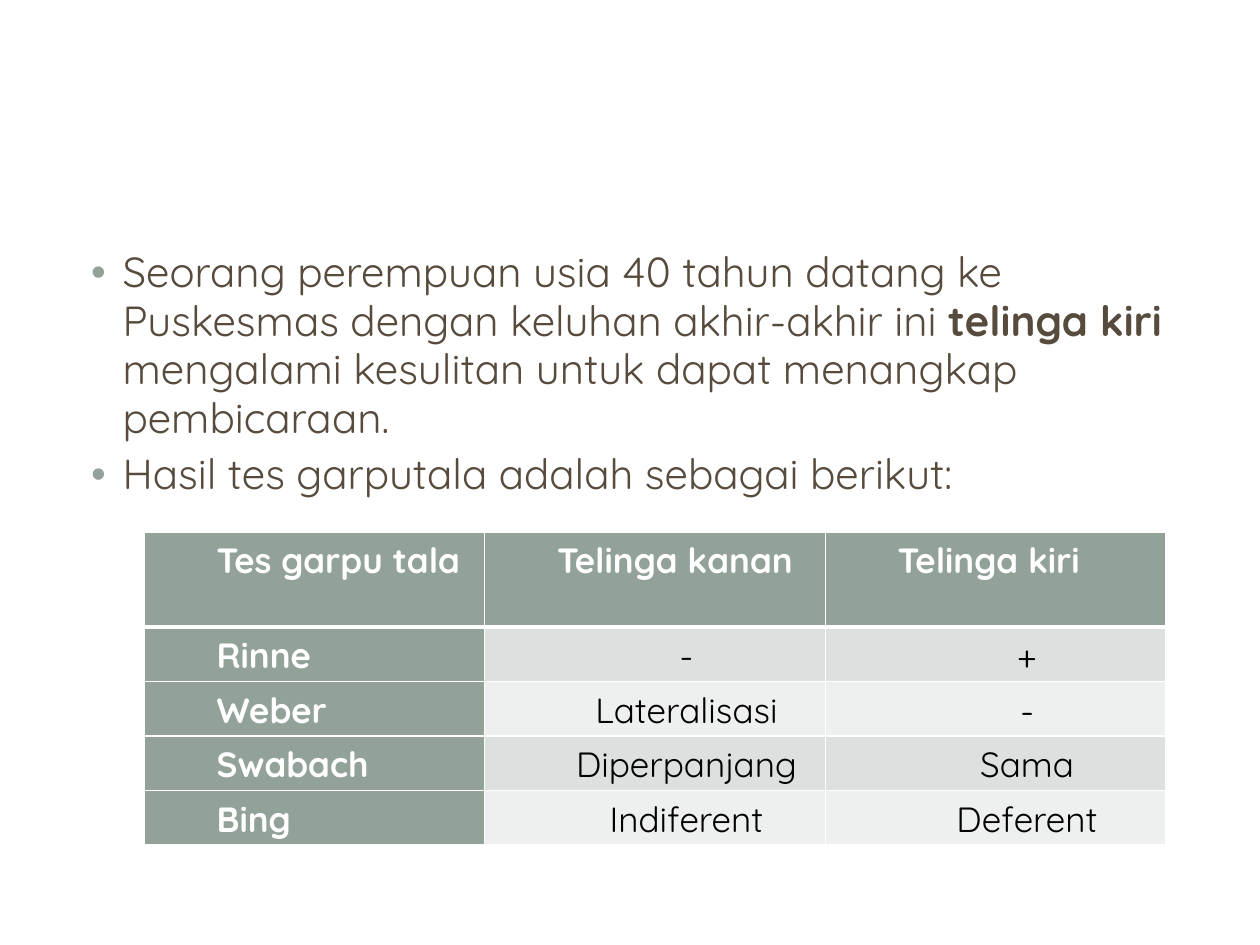
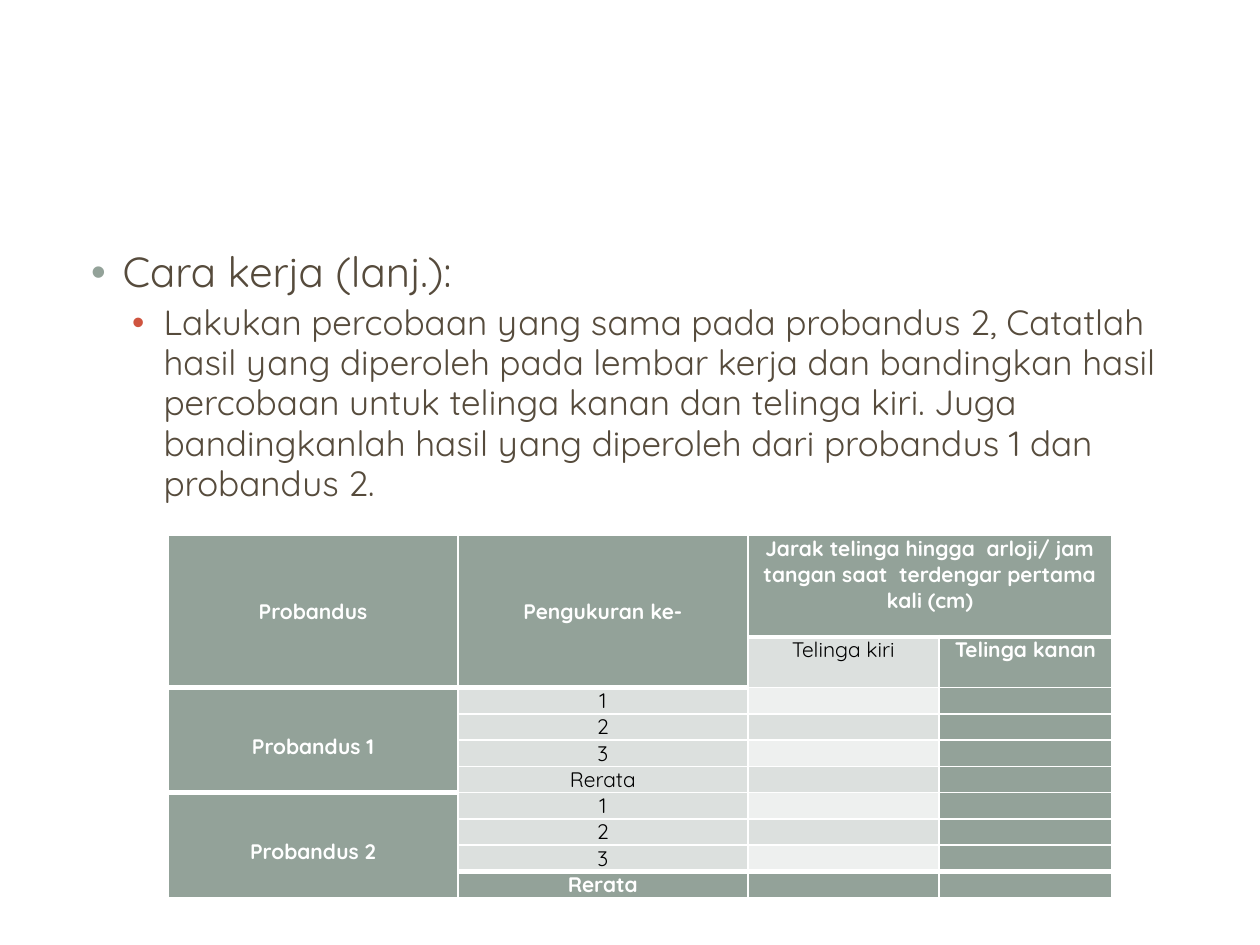
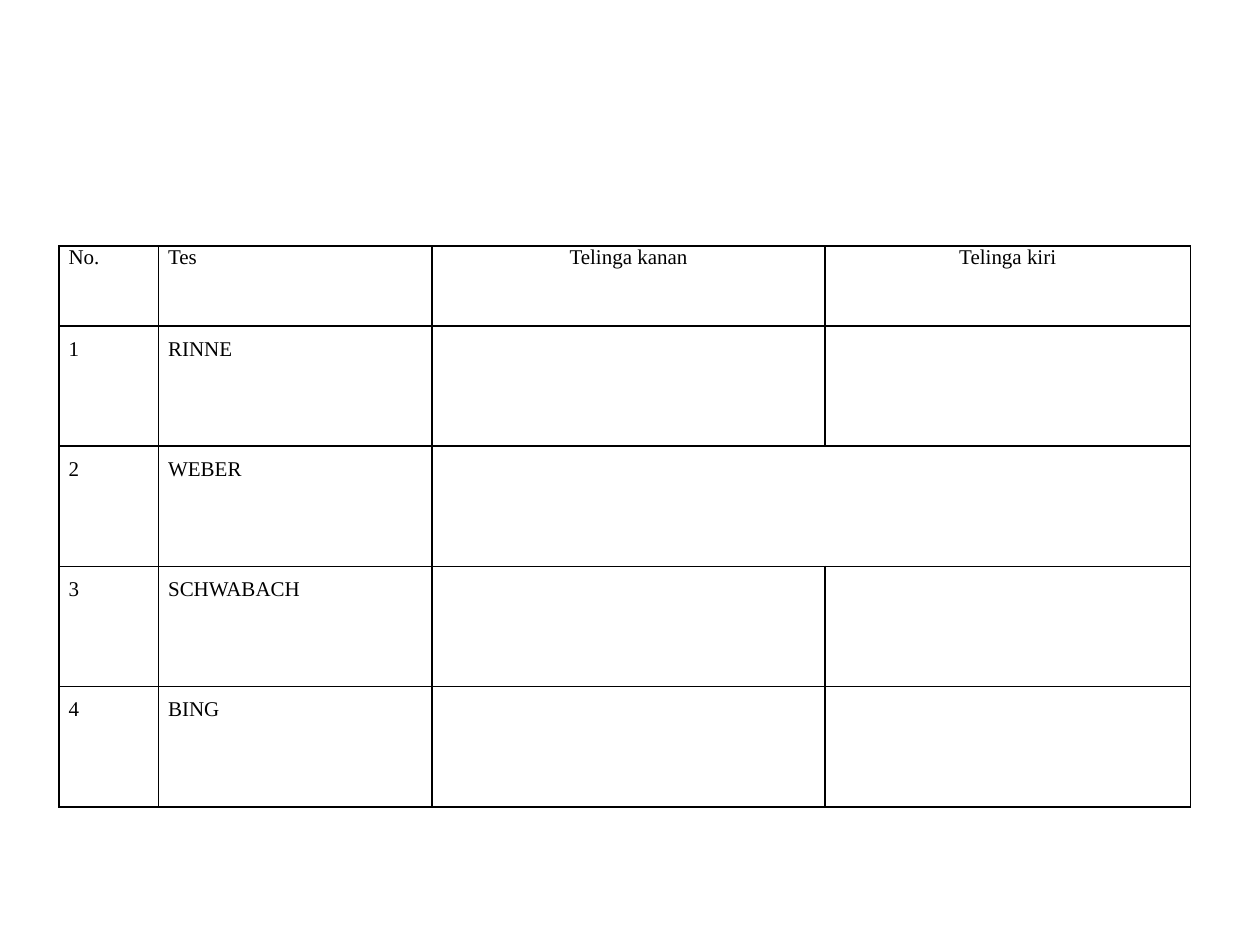
from lxml.etree import SubElement
from pptx import Presentation
from pptx.dml.color import RGBColor
from pptx.enum.shapes import MSO_SHAPE as Shape
from pptx.enum.text import MSO_ANCHOR as Anchor, PP_ALIGN as Align
from pptx.oxml.ns import qn
from pptx.util import Pt

# Shared look
SAGE, RUST, BROWN = "93A299", "CF543F", "564B3C"
MID, LIGHT, WHITE, BLACK = "DCE0DE", "EEF0EF", "FFFFFF", "000000"
SANS, SERIF = "Quicksand", "Times New Roman"
PANELS = [  # shape, left, top, width, height, opacity in percent
    (Shape.ROUNDED_RECTANGLE, 7.2, 7.9, 705.6, 524.9, 100),
    (Shape.RECTANGLE, 21.6, 21.6, 676.8, 104.4, 83),
    (Shape.RECTANGLE, 29.5, 29.5, 660.2, 87.8, 100),
]
BODY_BOX = (36, 138.2, 648, 344.2)
LEVELS = [  # formats of the two bullet levels
    dict(size=24, left=27, bullet=SAGE, before=4, spacing=0.97),
    dict(size=20, left=50.4, bullet=RUST, before=3.5, spacing=0.96),
]

# Content: body paragraphs are (level, [(text, bold), ...])
CASE = [
    (0, [("Seorang perempuan usia 40 tahun datang ke Puskesmas dengan keluhan akhir-akhir ini ", False),
         ("telinga kiri ", True),
         ("mengalami kesulitan untuk dapat menangkap pembicaraan.", False)]),
    (0, [("Hasil tes garputala adalah sebagai berikut:", False)]),
]
PROCEDURE = [
    (0, [("Cara kerja (lanj.):", False)]),
    (1, [("Lakukan percobaan yang sama pada probandus 2, Catatlah hasil yang diperoleh pada "
          "lembar kerja dan bandingkan hasil percobaan untuk telinga kanan dan telinga kiri. "
          "Juga bandingkanlah hasil yang diperoleh dari probandus 1 dan probandus 2.", False)]),
]
FORK_RESULTS = [
    ("Tes garpu tala", "Telinga kanan", "Telinga kiri"),
    ("Rinne", "-", "+"),
    ("Weber", "Lateralisasi", "-"),
    ("Swabach", "Diperpanjang", "Sama"),
    ("Bing", "Indiferent", "Deferent"),
]
MEASURES = ("1", "2", "3", "Rerata")
DISTANCES = [
    ("Probandus", "Pengukuran ke-",
     "Jarak telinga hingga  arloji/ jam tangan saat  terdengar pertama kali (cm)", ""),
    ("", "", "Telinga kiri", "Telinga kanan"),
] + [(f"Probandus {subject}" if measure == "1" else "", measure, "", "")
     for subject in (1, 2) for measure in MEASURES]
WORKSHEET = [("No.", "Tes", "Telinga kanan", "Telinga kiri")] + [
    (str(number), test, "", "")
    for number, test in enumerate(("RINNE", "WEBER", "SCHWABACH", "BING"), 1)]


def color(value):
    return RGBColor.from_string(value)


def apply(target, **formats):
    for name, value in formats.items():
        setattr(target, name, value)


def add_run(paragraph, text, font, size, ink, bold):
    run = paragraph.add_run()
    run.text = text
    apply(run.font, name=font, size=Pt(size), bold=bold)
    run.font.color.rgb = color(ink)


def add_panels(slide):
    for kind, left, top, width, height, opacity in PANELS:
        shape = slide.shapes.add_shape(kind, Pt(left), Pt(top), Pt(width), Pt(height))
        shape.shadow.inherit = False
        shape.fill.solid()
        shape.fill.fore_color.rgb = color(WHITE)
        shape.line.fill.background()
        if kind == Shape.ROUNDED_RECTANGLE:
            shape.adjustments[0] = 0.02
        if opacity < 100:
            tint = shape.fill._xPr.find(".//" + qn("a:srgbClr"))
            SubElement(tint, qn("a:alpha"), val=str(opacity * 1000))


def add_body(slide, paragraphs):
    frame = slide.shapes.add_textbox(*map(Pt, BODY_BOX)).text_frame
    frame.word_wrap = True
    for index, (level, runs) in enumerate(paragraphs):
        look = LEVELS[level]
        paragraph = frame.add_paragraph() if index else frame.paragraphs[0]
        apply(paragraph, level=level, space_before=Pt(look["before"]),
              line_spacing=look["spacing"])
        properties = paragraph._p.get_or_add_pPr()
        properties.set("marL", str(Pt(look["left"])))
        properties.set("indent", str(Pt(-18)))
        bullet = SubElement(properties, qn("a:buClr"))
        SubElement(bullet, qn("a:srgbClr"), val=look["bullet"])
        SubElement(properties, qn("a:buFont"), typeface="Arial")
        SubElement(properties, qn("a:buChar"), char="•")
        for text, bold in runs:
            add_run(paragraph, text, SANS, look["size"], BROWN, bold)


def set_borders(cell, ink, widths):
    properties = cell._tc.get_or_add_tcPr()
    for index, (side, width) in enumerate(widths.items()):
        line = properties.makeelement(qn("a:ln" + side), {"w": str(Pt(width))})
        fill = SubElement(line, qn("a:solidFill"))
        SubElement(fill, qn("a:srgbClr"), val=ink)
        properties.insert(index, line)


def add_table(slide, rows, place, columns, heights, size, align, font=SANS, border=WHITE,
              solid=None, band=None, spacing=lambda row, column: 1, merges=(), thick=(), indent=0):
    """thick holds the (row, column) cells with a heavy lower edge."""
    left, top = place
    frame = slide.shapes.add_table(len(rows), len(columns), Pt(left), Pt(top),
                                   Pt(sum(columns)), Pt(sum(heights)))
    table = frame.table
    apply(table, first_row=False, horz_banding=False)
    for column, width in zip(table.columns, columns):
        column.width = Pt(width)
    for row, height in zip(table.rows, heights):
        row.height = Pt(height)
    for row, texts in enumerate(rows):
        for column, text in enumerate(texts):
            cell = table.cell(row, column)
            apply(cell, margin_left=Pt(5.4), margin_right=Pt(5.4), margin_top=0, margin_bottom=0)
            strong = bool(solid and solid(row, column))
            if solid:
                cell.fill.solid()
                cell.fill.fore_color.rgb = color(SAGE if strong else band(row, column))
            else:
                cell.fill.background()
            set_borders(cell, border, {
                "L": 1, "R": 1,
                "T": 3 if (row - 1, column) in thick else 1,
                "B": 3 if (row, column) in thick else 1})
            paragraph = cell.text_frame.paragraphs[0]
            apply(paragraph, alignment=align(row, column), line_spacing=spacing(row, column))
            paragraph._p.get_or_add_pPr().set("marL", str(Pt(indent)))
            if text:
                add_run(paragraph, text, font, size, WHITE if strong else BLACK, strong)
            else:
                end = SubElement(paragraph._p, qn("a:endParaRPr"), sz=str(size * 100))
                SubElement(end, qn("a:latin"), typeface=font)
    for first, last in merges:
        table.cell(*first).merge(table.cell(*last))
        if last[0] > first[0]:
            table.cell(*first).vertical_anchor = Anchor.MIDDLE


def stripe(row, column):
    return MID if row % 2 else LIGHT


def main():
    presentation = Presentation()
    apply(presentation, slide_width=Pt(720), slide_height=Pt(540))
    case, procedure, worksheet = slides = [
        presentation.slides.add_slide(presentation.slide_layouts[6]) for _ in range(3)]
    for slide in slides:
        add_panels(slide)

    # Case and tuning fork results
    add_body(case, CASE)
    add_table(case, FORK_RESULTS, (82.4, 304.2), [194.6] * 3, [54] + [31.2] * 4, 20,
              align=lambda row, column: Align.CENTER if row and column else Align.LEFT,
              solid=lambda row, column: row == 0 or column == 0, band=stripe,
              spacing=lambda row, column: 1.15, indent=36,
              thick={(0, column) for column in range(3)})

    # Procedure and distance form
    add_body(procedure, PROCEDURE)
    last = len(DISTANCES) - 1
    add_table(procedure, DISTANCES, (96.1, 306), [165.6, 165.6, 109.3, 98.8],
              [58, 29] + [15] * 8, 12,
              align=lambda row, column: Align.CENTER,
              solid=lambda row, column: (row in (0, last) or column in (0, 3)
                                         or (row, column) == (1, 1)),
              band=lambda row, column: MID if column == 1 else stripe(row, column),
              spacing=lambda row, column: 1.5 if column == 0 and row > 1 else 1,
              merges=[((0, 0), (1, 0)), ((0, 1), (1, 1)), ((0, 2), (0, 3)),
                      ((2, 0), (5, 0)), ((6, 0), (9, 0))],
              thick={(1, 0), (1, 1), (0, 2), (0, 3), (5, 0)}
              | {(last - 1, column) for column in (1, 2, 3)})

    # Empty worksheet
    add_table(worksheet, WORKSHEET, (33.8, 140.5), [56.9, 156.2, 224.6, 208.8],
              [45.8] + [68.7] * 4, 12, font=SERIF, border=BLACK,
              align=lambda row, column: Align.JUSTIFY if column < 2 else Align.CENTER,
              spacing=lambda row, column: 1.5 if row else 1,
              merges=[((2, 2), (2, 3))])
    presentation.save("out.pptx")


if __name__ == "__main__":
    main()
